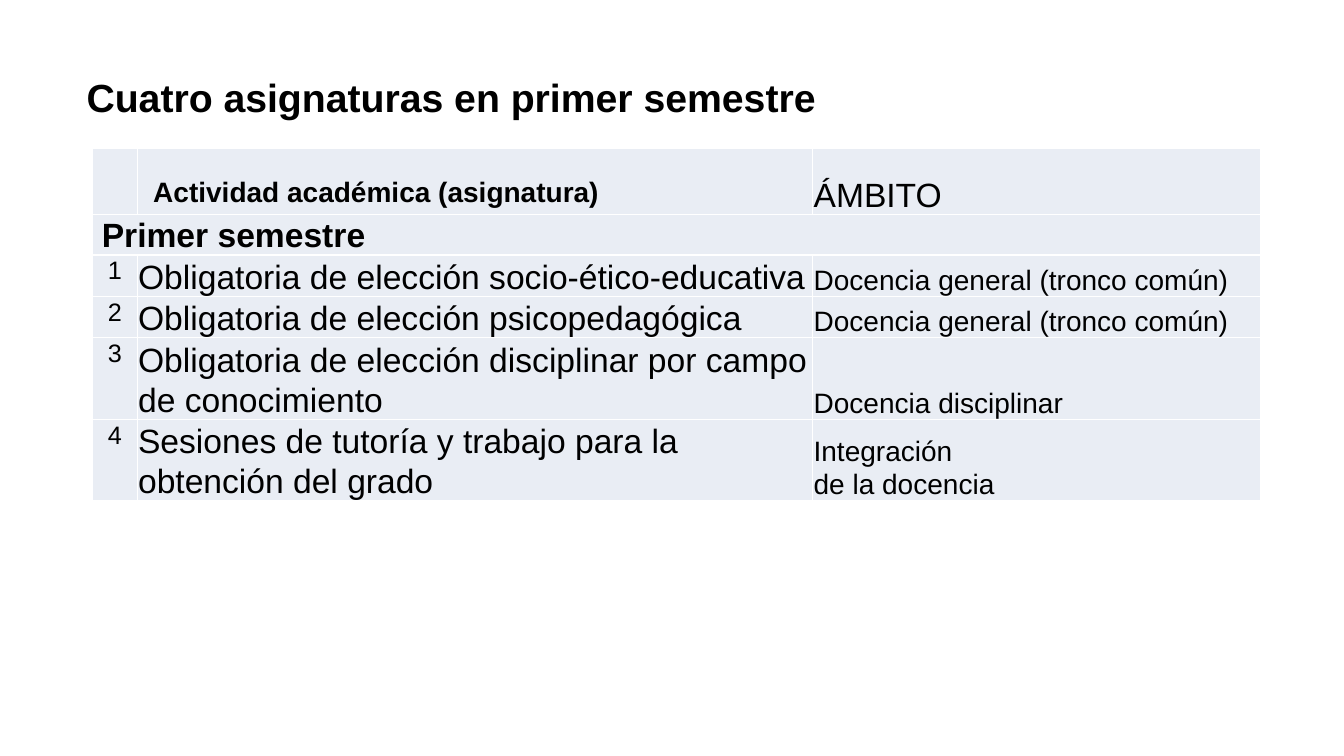
from lxml.etree import SubElement
from pptx import Presentation
from pptx.dml.color import RGBColor
from pptx.enum.text import MSO_ANCHOR, MSO_AUTO_SIZE, PP_ALIGN
from pptx.oxml.ns import qn
from pptx.util import Inches, Pt

# Content
TITLE = "Cuatro asignaturas en primer semestre"
HEADERS = ("Actividad académica (asignatura)", "ÁMBITO")
SEMESTER = "Primer semestre"
COURSES = [
    ("Obligatoria de elección socio-ético-educativa", "Docencia general (tronco común)"),
    ("Obligatoria de elección psicopedagógica", "Docencia general (tronco común)"),
    ("Obligatoria de elección disciplinar por campo de conocimiento", "Docencia disciplinar"),
    ("Sesiones de tutoría y trabajo para la obtención del grado", "Integración\nde la docencia"),
]
COLUMN_WIDTHS = (0.44, 6.7, 4.44)
ROW_HEIGHTS = (0.66, 0.4, 0.41, 0.41, 0.81, 0.8)
TEXT_COLOR, CELL_COLOR, BORDER_COLOR = "000000", "E9EDF4", "FFFFFF"
BORDER_WIDTH = Pt(1)


def color(value):
    return RGBColor.from_string(value)


def write(frame, text, size=24, bold=False, align=PP_ALIGN.LEFT, spacing=None):
    for index, line in enumerate(text.split("\n")):
        para = frame.add_paragraph() if index else frame.paragraphs[0]
        para.alignment = align
        para.line_spacing = spacing
        span = para.add_run()
        span.text = line
        span.font.name = "Arial"
        span.font.size = Pt(size)
        span.font.bold = bold
        span.font.color.rgb = color(TEXT_COLOR)


def style_cell(cell):
    properties = cell._tc.get_or_add_tcPr()
    for side in ("a:lnL", "a:lnR", "a:lnT", "a:lnB"):
        line = SubElement(properties, qn(side), w=str(BORDER_WIDTH))
        fill = SubElement(line, qn("a:solidFill"))
        SubElement(fill, qn("a:srgbClr"), val=BORDER_COLOR)
    cell.fill.solid()
    cell.fill.fore_color.rgb = color(CELL_COLOR)


def fill_cell(cell, text, left=0.01, top=0.01, right=0.01, bottom=0,
              anchor=MSO_ANCHOR.BOTTOM, spacing=1.07, **text_format):
    cell.margin_left, cell.margin_top = Inches(left), Inches(top)
    cell.margin_right, cell.margin_bottom = Inches(right), Inches(bottom)
    cell.vertical_anchor = anchor
    write(cell.text_frame, text, spacing=spacing, **text_format)


deck = Presentation()
deck.slide_width, deck.slide_height = Inches(13.33), Inches(7.5)
page = deck.slides.add_slide(deck.slide_layouts[6])

# Course table
table = page.shapes.add_table(
    len(ROW_HEIGHTS), len(COLUMN_WIDTHS), Inches(0.92), Inches(1.47),
    Inches(sum(COLUMN_WIDTHS)), Inches(sum(ROW_HEIGHTS))).table
table.first_row = table.horz_banding = False
for column, width in zip(table.columns, COLUMN_WIDTHS):
    column.width = Inches(width)
for row, height in zip(table.rows, ROW_HEIGHTS):
    row.height = Inches(height)
for cell in table.iter_cells():
    style_cell(cell)

# Header and semester rows
fill_cell(table.cell(0, 1), HEADERS[0], left=0.16, bottom=0.06, size=20, bold=True, spacing=1.0)
fill_cell(table.cell(0, 2), HEADERS[1])
table.cell(1, 0).merge(table.cell(1, 2))
fill_cell(table.cell(1, 0), SEMESTER, left=0.09, top=0, right=0,
          anchor=MSO_ANCHOR.TOP, bold=True)

# Numbered courses
for number, (course, area) in enumerate(COURSES, start=1):
    row = number + 1
    fill_cell(table.cell(row, 0), str(number), left=0, top=0, right=0,
              anchor=MSO_ANCHOR.TOP, size=18, align=PP_ALIGN.CENTER)
    fill_cell(table.cell(row, 1), course)
    fill_cell(table.cell(row, 2), area, size=20)

# Title
box = page.shapes.add_textbox(Inches(0.76), Inches(0.68), Inches(7.52), Inches(0.57))
box.text_frame.word_wrap = False
box.text_frame.auto_size = MSO_AUTO_SIZE.SHAPE_TO_FIT_TEXT
write(box.text_frame, TITLE, size=28, bold=True, align=PP_ALIGN.JUSTIFY)

deck.save("out.pptx")
